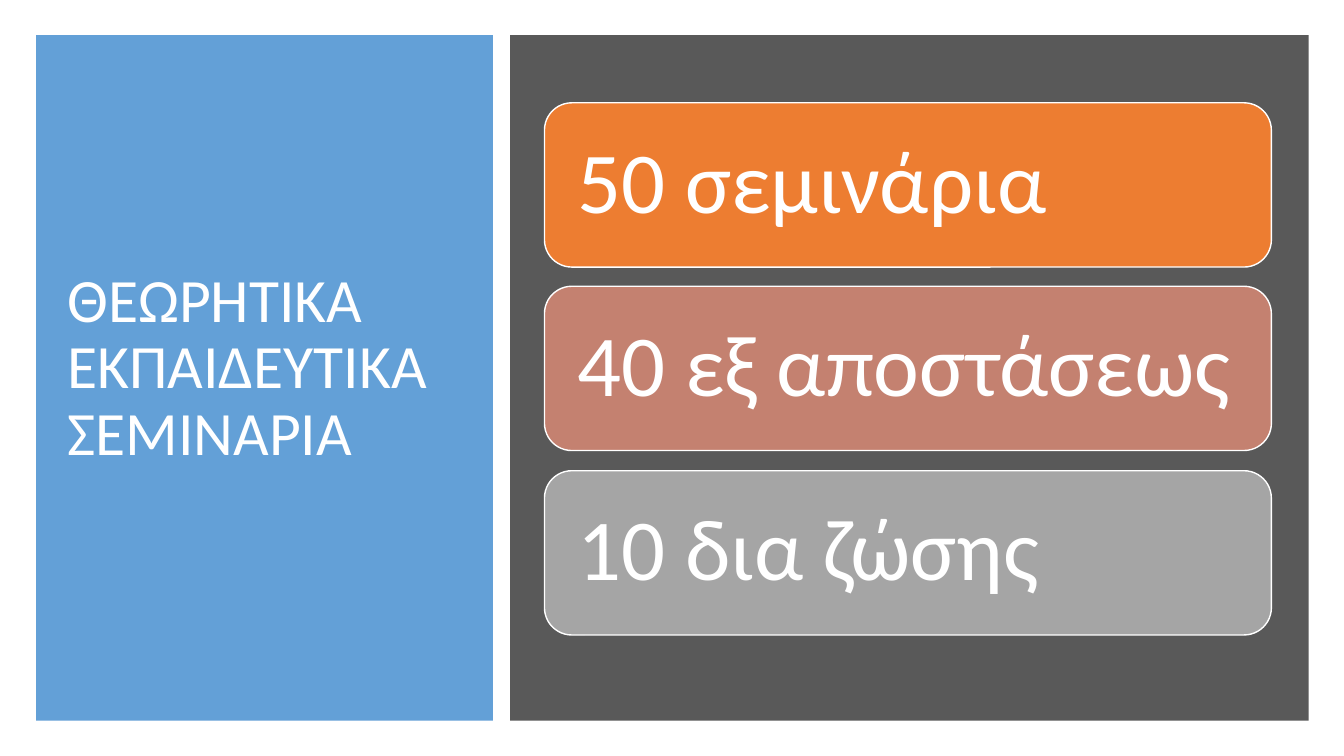
import pptx
import pptx.util
import pptx.dml.color
import pptx.enum.shapes
import pptx.enum.text
import pptx.oxml.ns
from dataclasses import dataclass
from lxml import etree
from pptx.util import Inches


@dataclass(frozen=True)
class Theme:
    font: str = "Calibri"
    white: str = "FFFFFF"
    blue: str = "5B9BD5"
    dark: str = "595959"
    orange: str = "ED7D31"
    rose: str = "C48170"
    grey: str = "A5A5A5"
    title_size: int = 44
    card_size: int = 62


THEME = Theme()
SHAPES = pptx.enum.shapes.MSO_SHAPE


def rgb(color):
    return pptx.dml.color.RGBColor.from_string(color)


def add_block(s, kind, left, top, width, height, color):
    sp = s.shapes.add_shape(kind, Inches(left), Inches(top), Inches(width), Inches(height))
    sp.shadow.inherit = False
    sp.fill.solid()
    sp.fill.fore_color.rgb = rgb(color)
    sp.line.fill.background()
    return sp


def set_opacity(sp, percent):
    color = sp.element.spPr.find(".//" + pptx.oxml.ns.qn("a:srgbClr"))
    alpha = etree.SubElement(color, pptx.oxml.ns.qn("a:alpha"))
    alpha.set("val", str(percent * 1000))


def write_text(sp, text, size, inset_x, inset_y):
    tf = sp.text_frame
    tf.text = text
    tf.word_wrap = True
    tf.vertical_anchor = pptx.enum.text.MSO_ANCHOR.MIDDLE
    tf.margin_left = tf.margin_right = Inches(inset_x)
    tf.margin_top = tf.margin_bottom = Inches(inset_y)
    p = tf.paragraphs[0]
    p.alignment = pptx.enum.text.PP_ALIGN.LEFT
    p.line_spacing = 0.9
    font = p.runs[0].font
    font.name = THEME.font
    font.size = pptx.util.Pt(size)
    font.color.rgb = rgb(THEME.white)


def add_title(s, text):
    sp = s.shapes.add_textbox(Inches(0.57), Inches(0.64), Inches(4.07), Inches(6.04))
    write_text(sp, text, THEME.title_size, 0.1, 0.05)


def add_card(s, top, text, color):
    sp = add_block(s, SHAPES.ROUNDED_RECTANGLE, 5.4, top, 7.21, 1.63, color)
    sp.line.color.rgb = rgb(THEME.white)
    sp.line.width = pptx.util.Pt(1)
    # The rounded corners add their own inset to this one
    write_text(sp, text, THEME.card_size, 0.25, 0.25)


def main():
    prs = pptx.Presentation()
    prs.slide_width, prs.slide_height = Inches(13.33), Inches(7.5)
    s = prs.slides.add_slide(prs.slide_layouts[6])

    # Title panel
    panel = add_block(s, SHAPES.RECTANGLE, 0.36, 0.35, 4.53, 6.8, THEME.blue)
    set_opacity(panel, 95)
    add_title(s, "ΘΕΩΡΗΤΙΚΑ ΕΚΠΑΙΔΕΥΤΙΚΑ ΣΕΜΙΝΑΡΙΑ")

    # Seminar cards on the dark panel
    add_block(s, SHAPES.RECTANGLE, 5.06, 0.35, 7.92, 6.8, THEME.dark)
    cards = [
        ("50 σεμινάρια", THEME.orange),
        ("40 εξ αποστάσεως", THEME.rose),
        ("10 δια ζώσης", THEME.grey),
    ]
    first_top, pitch = 1.02, 1.825
    for i, (text, color) in enumerate(cards):
        add_card(s, round(first_top + i * pitch, 2), text, color)

    prs.save("out.pptx")


if __name__ == "__main__":
    main()
